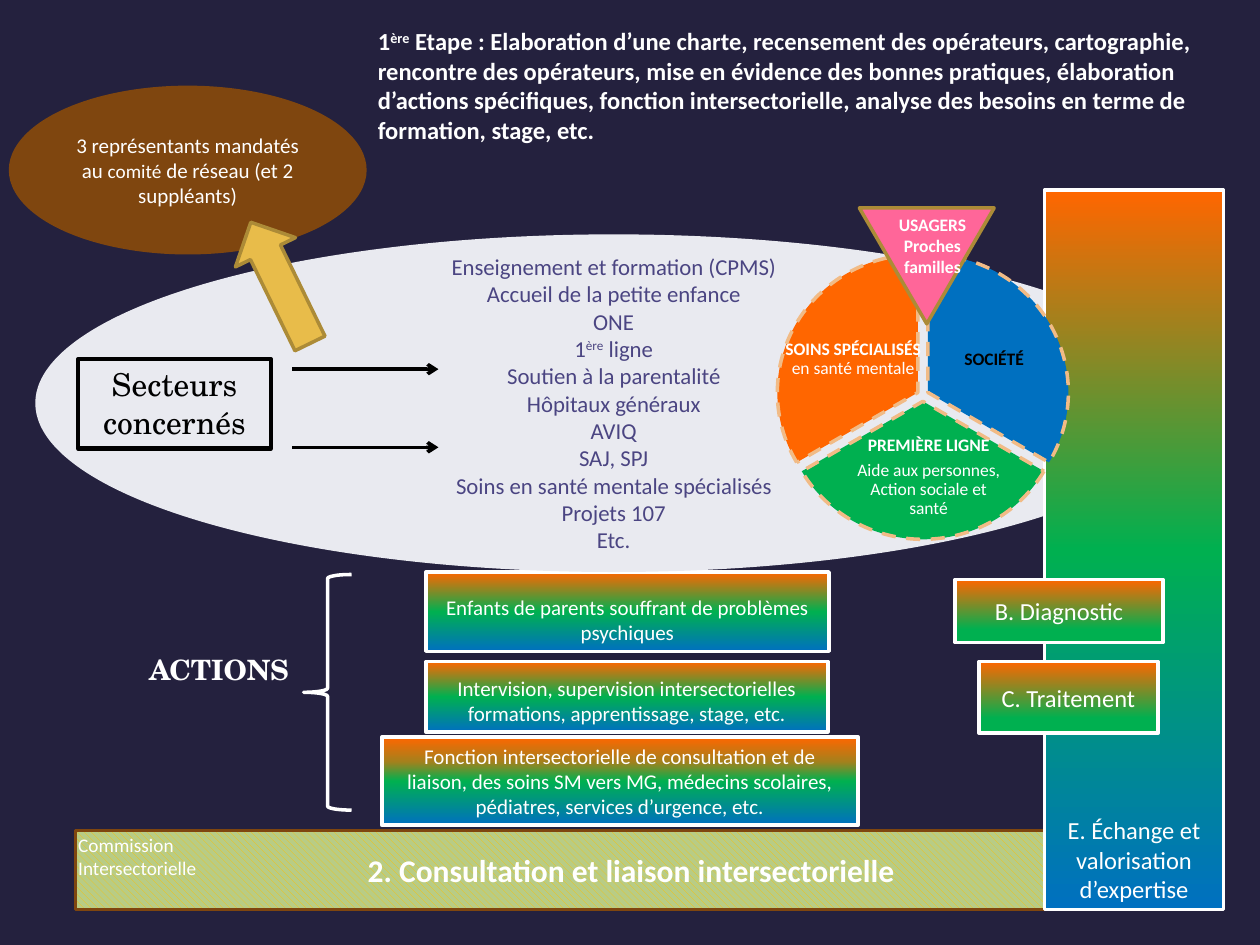
import pptx
import pptx.util
import pptx.dml.color
import pptx.enum.dml
import pptx.enum.shapes
import pptx.enum.text
import pptx.oxml
import pptx.oxml.ns

Pt = pptx.util.Pt
RGB = pptx.dml.color.RGBColor.from_string
Form = pptx.enum.shapes.MSO_SHAPE
Align = pptx.enum.text.PP_ALIGN
Anchor = pptx.enum.text.MSO_ANCHOR
Fit = pptx.enum.text.MSO_AUTO_SIZE
Dash = pptx.enum.dml.MSO_LINE.DASH
qn = pptx.oxml.ns.qn


class Theme:
    night, white, black = "24213E", "FFFFFF", "000000"
    brown, gold, ochre = "7F460F", "E8BC4A", "AC8B37"
    olive, amber, peach = "B8CC85", "FFC000", "F1BB86"
    pale, plum, pink = "E9EAF0", "4B4582", "FF6699"
    blue, green, orange = "0070C0", "00B050", "FF6600"
    rust = "A5801C"
    sans, serif = "Calibri", "TeX Gyre Schola"
    tiny, small, body, list, lead, head, title = 10, 11, 12, 13, 14, 16, 18


deck = pptx.Presentation()
deck.slide_width, deck.slide_height = pptx.util.Inches(10), pptx.util.Inches(7.5)
unit = deck.slide_width / 100  # grid of 100 columns by 75 rows
slide = deck.slides.add_slide(deck.slide_layouts[6])
slide.background.fill.solid()
slide.background.fill.fore_color.rgb = RGB(Theme.night)


def draw(form, box, fill=None, line=None, width=2, home=slide, turn=0):
    """Add a shape, or a text box if form is None; a list of (place, colour) fills as a gradient."""
    place = [round(v * unit) for v in box]
    if form is None:
        shape = home.shapes.add_textbox(*place)
        shape.rotation = turn
        return shape
    shape = home.shapes.add_shape(form, *place)
    shape.shadow.inherit = False
    shape.rotation = turn
    if isinstance(fill, list):
        shape.fill.gradient()
        shape.fill.gradient_angle = 90
        stops = shape._element.spPr.find(".//" + qn("a:gsLst"))
        stops.clear()
        for pos, tone in fill:
            stop = pptx.oxml.parse_xml(
                f'<a:gs {pptx.oxml.ns.nsdecls("a")} pos="{pos * 1000}"><a:srgbClr val="{tone}"/></a:gs>')
            stops.append(stop)
    elif fill:
        shape.fill.solid()
        shape.fill.fore_color.rgb = RGB(fill)
    else:
        shape.fill.background()
    if line:
        shape.line.color.rgb = RGB(line)
        shape.line.width = Pt(width)
    else:
        shape.line.fill.background()
    return shape


def write(shape, paras, size, tone=Theme.white, face=Theme.sans, bold=False, pad=None, frame={}, para={}):
    """Fill a shape; a paragraph is a string or a list of strings and (string, changes) pairs."""
    body = shape.text_frame
    body.word_wrap = True
    for key, val in frame.items():
        setattr(body, key, val)
    for side, gap in zip(("left", "top", "right", "bottom"), pad or ()):
        setattr(body, "margin_" + side, pptx.util.Inches(gap))
    for i, parts in enumerate(paras):
        p = body.paragraphs[0] if i == 0 else body.add_paragraph()
        for key, val in ({"alignment": Align.CENTER} | para).items():
            setattr(p, key, val)
        for part in [parts] if isinstance(parts, str) else parts:
            text, diff = (part, {}) if isinstance(part, str) else part
            look = {"size": Pt(size), "name": face, "bold": bold} | diff
            raised = look.pop("raised", False)
            run = p.add_run()
            run.text = text
            for key, val in look.items():
                setattr(run.font, key, val)
            run.font.color.rgb = RGB(tone)
            if raised:
                run._r.get_or_add_rPr().set("baseline", "30000")


low, mid = {"vertical_anchor": Anchor.BOTTOM}, {"vertical_anchor": Anchor.MIDDLE}
top = {"vertical_anchor": Anchor.TOP, "auto_size": Fit.SHAPE_TO_FIT_TEXT}
left, right = {"alignment": Align.LEFT}, {"alignment": Align.RIGHT}
light, strong, sup = {"bold": False}, {"bold": True}, {"raised": True}
full = [(0, Theme.blue), (50, Theme.green), (100, Theme.orange)]
warm = [(21, Theme.green), (100, Theme.orange)]
mixed = full[:2] + [(72, Theme.rust)] + full[2:]

# Liaison band
band = draw(Form.RECTANGLE, (6, 65.9, 88.2, 6.3), Theme.olive, Theme.brown)
band.fill.patterned()
band.fill.pattern = pptx.enum.dml.MSO_PATTERN.WIDE_DOWNWARD_DIAGONAL
band.fill.fore_color.rgb = RGB(Theme.amber)
band.fill.back_color.rgb = RGB(Theme.olive)
write(band, ["2. Consultation et liaison intersectorielle"], Theme.title, bold=True, frame=mid)
note = draw(None, (9.5, 62.8, 3.7, 10.3), turn=90)
write(note, ["Commission Intersectorielle"], Theme.small, pad=(0, 0, 0, 0), frame=top, para=left)
note.text_frame._txBody.bodyPr.set("vert", "vert270")

# Actions
for box, fill, text in (
    ((30.3, 58.5, 37.8, 7), mixed, "Fonction intersectorielle de consultation et de liaison, des soins SM vers MG, "
                                   "médecins scolaires, pédiatres, services d’urgence, etc."),
    ((33.8, 52.5, 31.9, 5.6), full, "Intervision, supervision intersectorielles formations, apprentissage, stage, etc."),
    ((33.8, 45.4, 32, 6.3), full, "Enfants de parents souffrant de problèmes psychiques"),
):
    write(draw(Form.RECTANGLE, box, fill, Theme.white), [text], Theme.body, frame=low)

# Sectors
field = draw(Form.OVAL, (2.8, 18.6, 91.8, 26.8), Theme.pale)
write(field, [
    "Enseignement et formation (CPMS)", "Accueil de la petite enfance", "ONE",
    ["1", ("ère", sup), " ligne"], "Soutien à la parentalité", "Hôpitaux généraux", "AVIQ",
    "SAJ, SPJ", "Soins en santé mentale spécialisés", "Projets 107", "Etc.",
], Theme.list, Theme.plum, pad=(0.1, 0.35, 0.1, 0.35), frame=mid)

# Column of expertise and its steps
for box, fill, text, frame in (
    ((82.9, 15.1, 14.2, 57.1), full, "E. Échange et valorisation d’expertise", low),
    ((75.8, 46, 16.5, 5), warm, "B. Diagnostic", mid),
    ((77.7, 52.5, 14.2, 5.7), warm, "C. Traitement", mid),
):
    write(draw(Form.RECTANGLE, box, fill, Theme.white), [text], Theme.lead, frame=frame)

label = draw(Form.RECTANGLE, (6.2, 28.5, 15.3, 7.1), None, Theme.black, 2.5)
write(label, ["Secteurs concernés"], Theme.title, Theme.black, Theme.serif, frame=top)
for row in (35.5, 29.3):
    ends = [round(v * unit) for v in (23.2, row, 34.8, row)]
    arrow = slide.shapes.add_connector(pptx.enum.shapes.MSO_CONNECTOR.STRAIGHT, *ends)
    arrow.line.color.rgb = RGB(Theme.black)
    arrow.line.width = Pt(2)
    tip = pptx.oxml.parse_xml(f'<a:tailEnd {pptx.oxml.ns.nsdecls("a")} type="arrow"/>')
    arrow.line._get_or_add_ln().append(tip)
    arrow._element.spPr.append(pptx.oxml.parse_xml(f'<a:effectLst {pptx.oxml.ns.nsdecls("a")}/>'))

# Network committee
team = draw(Form.OVAL, (0.7, 6.8, 28.4, 13.4), Theme.brown)
write(team, [["3 représentants mandatés au ", ("comité", {"size": Pt(Theme.small)}),
              " de réseau (et 2 suppléants)"]], Theme.body, frame=mid)
draw(Form.LEFT_ARROW, (16.9, 19.8, 10.7, 5.3), Theme.gold, Theme.ochre, turn=64)

step = draw(None, (29, 1.6, 68.2, 12.8))
write(step, [["1", ("ère", sup), " Etape : Elaboration d’une charte, recensement des opérateurs, cartographie, "
              "rencontre des opérateurs, mise en évidence des bonnes pratiques, élaboration d’actions "
              "spécifiques, fonction intersectorielle, analyse des besoins en terme de formation, stage, etc."]],
      Theme.lead, bold=True, frame=top, para=left)

# Wheel: each slice spans a third, with angles in the preset's own scale
for spot, arc, fill, box, tone, paras in (
    ((62.5, 20.2), (162, 18), Theme.blue, (74.9, 25.3, 8, 6.5), Theme.black, [("SOCIÉTÉ", strong)]),
    ((62.1, 20.9), (18, 90), Theme.green, (67.7, 35, 12, 5.7), Theme.white,
     [[("PREMIÈRE LIGNE", strong)], "Aide aux personnes, Action sociale et santé"]),
    ((61.7, 20.2), (90, 162), Theme.orange, (62.1, 25.3, 11.2, 6.5), Theme.white,
     [[("SOINS SPÉCIALISÉS ", strong), "en santé mentale"]]),
):
    group = slide.shapes.add_group_shape()
    slice = draw(Form.PIE, (*spot, 22.3, 21.9), fill, Theme.peach, home=group)
    slice.line.dash_style = Dash
    for i, angle in enumerate(arc):
        slice.adjustments[i] = angle
    paras = [[p] if isinstance(p, tuple) else p for p in paras]
    write(draw(None, box, home=group), paras, Theme.tiny, tone, pad=(0.02,) * 4, frame=mid,
          para={"line_spacing": 0.9, "space_after": Pt(3.5)})

draw(Form.LEFT_BRACE, (24.1, 45.6, 3.8, 18.7), None, Theme.white)
write(draw(None, (5.7, 51.3, 18.2, 3.7)), ["ACTIONS"], Theme.head, face=Theme.serif,
      bold=True, frame=top, para=right)

# Users at the tip of the wheel
draw(Form.ISOSCELES_TRIANGLE, (68.2, 16.5, 10.7, 9.2), Theme.pink, Theme.ochre, turn=180)
write(draw(None, (68.4, 16.5, 11.2, 6.1)), ["USAGERS", "Proches", "familles"], Theme.tiny, bold=True, frame=top)

deck.save("out.pptx")
